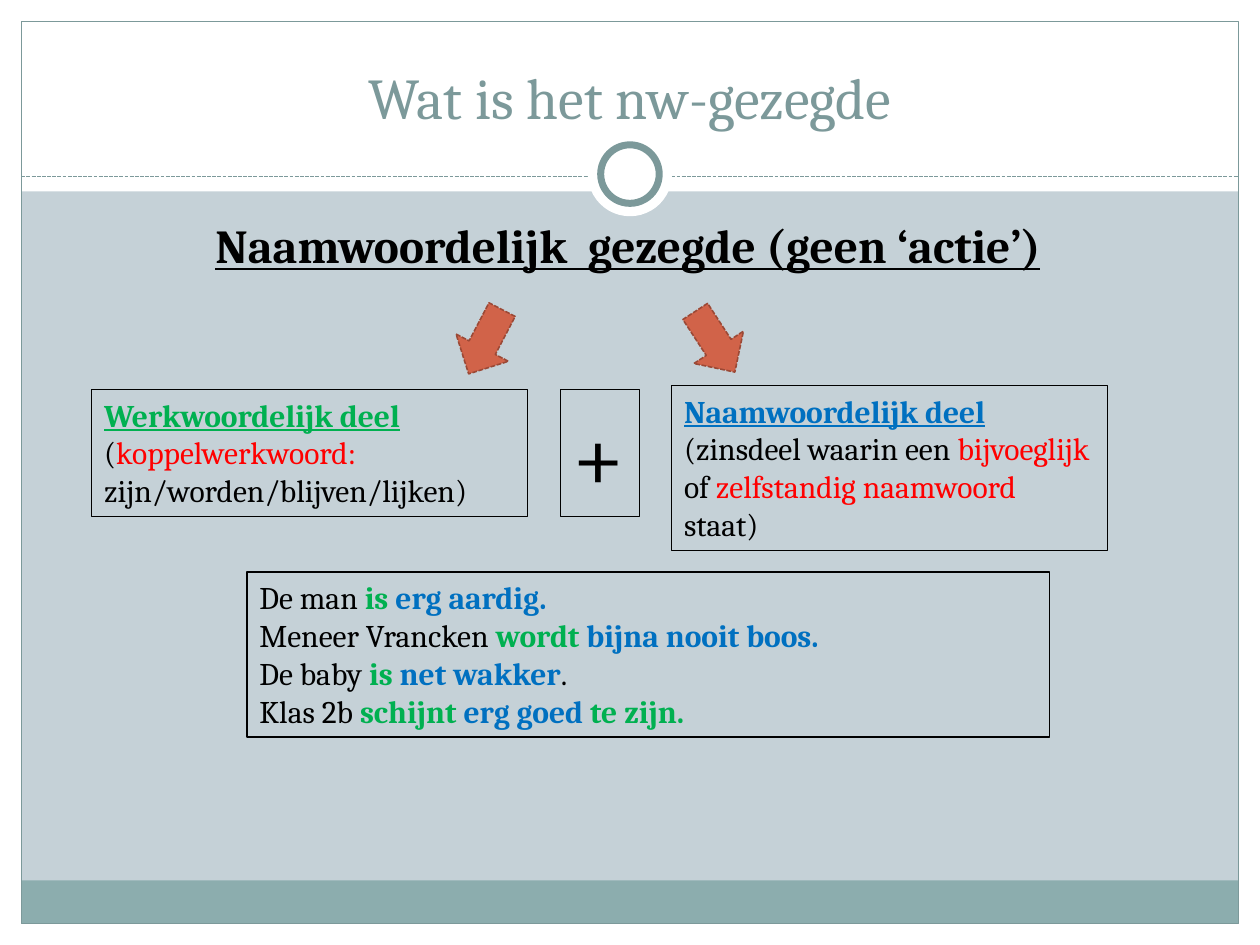
from pptx import Presentation
from pptx.dml.color import RGBColor
from pptx.enum.dml import MSO_LINE
from pptx.enum.shapes import MSO_CONNECTOR, MSO_SHAPE
from pptx.enum.text import MSO_ANCHOR, MSO_AUTO_SIZE, PP_ALIGN
from pptx.oxml.ns import qn
from pptx.util import Cm, Pt
from lxml import etree

RECT, OVAL, ARROW = MSO_SHAPE.RECTANGLE, MSO_SHAPE.OVAL, MSO_SHAPE.DOWN_ARROW
DASH, LINE = MSO_LINE.SQUARE_DOT, MSO_CONNECTOR.STRAIGHT
MID, LOW, TOP = PP_ALIGN.CENTER, MSO_ANCHOR.BOTTOM, MSO_ANCHOR.TOP
FIT, FIXED = MSO_AUTO_SIZE.SHAPE_TO_FIT_TEXT, MSO_AUTO_SIZE.NONE

WHITE, BLACK, TEAL, RUST = "FFFFFF", "000000", "7C999A", "D16349"
GREEN, BLUE, RED = "00B050", "0070C0", "FF0000"


def paint(fill, color=None):
    if color:
        fill.solid()
        fill.fore_color.rgb = RGBColor.from_string(color)
    else:
        fill.background()


def write(para, text, size=18, color=BLACK, bold=False, under=False):
    run = para.add_run()
    run.text = text
    run.font.name = "Cambria"
    run.font.size = Pt(size)
    run.font.bold = bold
    run.font.underline = under
    paint(run.font.fill, color)


deck = Presentation()
deck.slide_width, deck.slide_height = Cm(25.4), Cm(19.05)
slide = deck.slides.add_slide(deck.slide_layouts[1])
shapes = slide.shapes
paint(slide.background.fill, "C5D1D7")

# Margins, footer band and frame
edge, wide, high = 0.43, 25.4, 19.05
frame = [
    (0, high - edge, wide, edge, WHITE, None),
    (0, 0, wide, 3.86, WHITE, None),
    (0, 0, edge, high, WHITE, None),
    (wide - edge, 0, edge, high, WHITE, None),
    (edge, 17.75, wide - 2 * edge, 0.87, "8CADAE", None),
    (edge, edge, wide - 2 * edge, high - 2 * edge, None, TEAL),
]
for left, top, width, height, fill, line in frame:
    part = shapes.add_shape(RECT, Cm(left), Cm(top), Cm(width), Cm(height))
    part.shadow.inherit = False
    paint(part.fill, fill)
    paint(part.line.fill, line)
    if line:
        part.line.width = Pt(0.75)

# Dashed rule under the title
rule = shapes.add_connector(LINE, Cm(edge), Cm(3.56), Cm(wide - edge), Cm(3.56))
paint(rule.line.fill, TEAL)
rule.line.width = Pt(0.75)
rule.line.dash_style = DASH
etree.SubElement(rule._element.spPr, qn("a:effectLst"))

# Ring on the rule
for size, line in ((1.7, None), (1.18, TEAL)):
    ring = shapes.add_shape(OVAL, Cm((wide - size) / 2), Cm(3.51 - size / 2),
                            Cm(size), Cm(size))
    ring.shadow.inherit = False
    paint(ring.fill, WHITE)
    paint(ring.line.fill, line)
    if line:
        ring.line.width = Pt(4)

# Title and heading, brought in front of the frame
title, body = slide.placeholders
heads = [
    (title, (0.85, 0.64, 23.7, 2.12), LOW, "Wat is het nw-gezegde",
     dict(size=33, color=TEAL)),
    (body, (0.85, 4.24, 23.62, 12.7), TOP,
     "Naamwoordelijk  gezegde (geen ‘actie’)",
     dict(size=27, bold=True, under=True)),
]
for holder, place, anchor, text, style in heads:
    holder.left, holder.top, holder.width, holder.height = map(Cm, place)
    frame = holder.text_frame
    frame.auto_size = FIXED
    frame.vertical_anchor = anchor
    para = frame.paragraphs[0]
    para.alignment = MID
    write(para, text, **style)
    shapes._spTree.append(holder._element)

para.space_before = Pt(5.4)
props = para._p.get_or_add_pPr()
props.set("marL", "0")
props.set("indent", "0")
etree.SubElement(props, qn("a:buNone"))

# Arrows to the two parts
for left, turn in ((9.19, 27.5), (13.82, 326.9)):
    arrow = shapes.add_shape(ARROW, Cm(left), Cm(6.16), Cm(1.19), Cm(1.46))
    arrow.rotation = turn
    arrow.shadow.inherit = False
    paint(arrow.fill, RUST)
    paint(arrow.line.fill, "9B4936")
    arrow.line.width = Pt(0.9)
    arrow.line.dash_style = DASH

# Boxes: place, then lines of (text, format)
plain, red = {}, dict(color=RED)
verb, noun = dict(color=GREEN, bold=True), dict(color=BLUE, bold=True)
boxes = [
    ((1.85, 7.85, 8.79, 2.57), [
        [("Werkwoordelijk deel", dict(verb, under=True))],
        [("(", plain), ("koppelwerkwoord: ", red),
         ("zijn/worden/blijven/lijken)", plain)],
    ]),
    ((13.54, 7.77, 8.79, 3.33), [
        [("Naamwoordelijk deel", dict(noun, under=True))],
        [("(zinsdeel waarin een ", plain), ("bijvoeglijk", red),
         (" of ", plain), ("zelfstandig naamwoord", red), (" staat)", plain)],
    ]),
    ((4.98, 11.53, 16.18, 3.33), [
        [("De man ", plain), ("is ", verb), ("erg aardig.", noun)],
        [("Meneer Vrancken ", plain), ("wordt ", verb),
         ("bijna nooit boos.", noun)],
        [("De baby ", plain), ("is ", verb), ("net wakker", noun),
         (".", plain)],
        [("Klas 2b ", plain), ("schijnt ", verb), ("erg goed", noun),
         (" te zijn.", verb)],
    ]),
    ((11.3, 7.85, 1.6, 2.57), [[("+", dict(size=54))]]),
]
for place, lines in boxes:
    box = shapes.add_textbox(*map(Cm, place))
    paint(box.line.fill, BLACK)
    box.line.width = Pt(0.75)
    frame = box.text_frame
    frame.word_wrap = True
    frame.auto_size = FIT
    for i, line in enumerate(lines):
        para = frame.add_paragraph() if i else frame.paragraphs[0]
        for text, style in line:
            write(para, text, **style)

deck.save("out.pptx")
